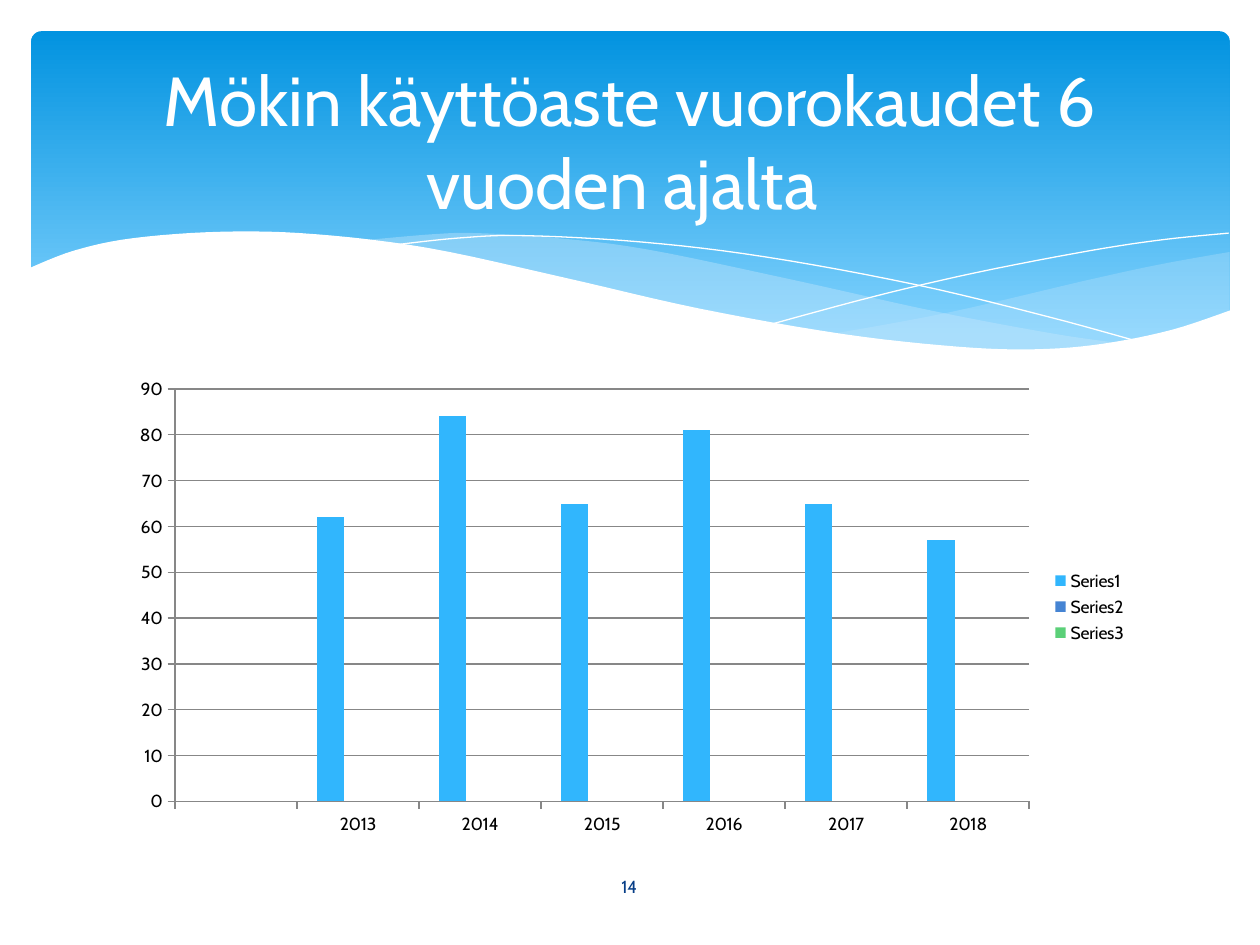
"""Builds a slide with a wave banner and a column chart of yearly cabin use."""
from lxml.etree import SubElement
from pptx import Presentation
from pptx.chart.data import CategoryChartData
from pptx.dml.color import RGBColor
from pptx.enum.chart import XL_CHART_TYPE, XL_LEGEND_POSITION, XL_TICK_MARK
from pptx.enum.shapes import MSO_SHAPE
from pptx.enum.text import MSO_ANCHOR, MSO_AUTO_SIZE, PP_ALIGN
from pptx.oxml.ns import qn
from pptx.util import Cm, Pt

FONT = "Cabin"
COLORS = {
    "white": "FFFFFF", "black": "000000", "number": "073E87", "grid": "878787",
    "banner_top": "0293E0", "banner_bottom": "83D3FE", "band": "C6E7FC",
    "series": ["31B6FD", "4584D3", "5BD078"],
}
YEARS = ["", "2013", "2014", "2015", "2016", "2017", "2018"]
DAYS = [None, 62, 84, 65, 81, 65, 57]

RIGHT_BAND_TOP = [(16.79, 6.73), (19.13, 6.3), (21.87, 5.66), (23.39, 5.33), (24.79, 5.08)]
RIGHT_BAND_BOTTOM = [(24.79, 6.27), (23.57, 6.68), (22.15, 6.96), (20.4, 7.06),
                     (18.59, 6.96), (16.79, 6.73)]
LONG_BAND_TOP = [(7.26, 4.85), (8.74, 4.72), (9.65, 4.7), (11.23, 4.8), (13.06, 5.03),
                 (15.98, 5.64), (18.82, 6.27), (21.26, 6.73), (22.68, 6.93)]
LONG_BAND_BOTTOM = [(22.68, 6.93), (21.03, 7.06), (19.63, 7.04), (17.65, 6.86),
                    (15.27, 6.48), (11.4, 5.64), (9.19, 5.16), (7.26, 4.85)]
FALLING_LINE = [(7.85, 4.95), (9.22, 4.8), (10.57, 4.75), (12.95, 4.88), (15.44, 5.18),
                (18.47, 5.74), (21.11, 6.38), (23.04, 6.91)]
RISING_LINE = [(15.57, 6.53), (17.65, 5.97), (19.71, 5.49), (22, 5.05), (23.47, 4.83),
               (24.77, 4.7)]
WAVE_TOP = [(0.58, 5.41), (1.5, 5.05), (2.69, 4.8), (4.5, 4.67), (6.35, 4.72), (8.64, 5),
            (11.35, 5.59), (14.1, 6.22), (16.97, 6.73), (19.33, 6.99), (20.9, 7.04),
            (22.23, 6.93), (23.62, 6.65), (24.82, 6.25)]
WAVE_BASE = [(24.82, 8.36), (0.58, 8.36)]


def rgb(name):
    """Return the named colour."""
    return RGBColor.from_string(COLORS[name])


def style_font(font, size, color):
    """Set the typeface, size and colour of a font."""
    font.name, font.size, font.color.rgb = FONT, Pt(size), rgb(color)


def smooth(knots, steps=6):
    """Return points on a Catmull-Rom curve through the knots."""
    padded = [knots[0], *knots, knots[-1]]
    points = [knots[0]]
    for a, b, c, d in zip(padded, padded[1:], padded[2:], padded[3:]):
        for step in range(1, steps + 1):
            t = step / steps
            points.append(tuple(
                (2 * q + (r - p) * t + (2 * p - 5 * q + 4 * r - s) * t ** 2
                 + (3 * q - p - 3 * r + s) * t ** 3) / 2
                for p, q, r, s in zip(a, b, c, d)))
    return points


def add_outline(slide, points, close):
    """Add a freeform through points given in centimetres."""
    scaled = [(Cm(x), Cm(y)) for x, y in points]
    builder = slide.shapes.build_freeform(*scaled[0])
    builder.add_line_segments(scaled[1:], close=close)
    shape = builder.convert_to_shape()
    shape.shadow.inherit = False
    return shape


def add_area(slide, points, color, opacity=100):
    """Add a filled area without an outline."""
    shape = add_outline(slide, points, True)
    shape.fill.solid()
    shape.fill.fore_color.rgb = rgb(color)
    shape.line.fill.background()
    if opacity < 100:
        fill_color = shape.element.xpath("./p:spPr/a:solidFill/a:srgbClr")[0]
        SubElement(fill_color, qn("a:alpha"), val=str(opacity * 1000))


def add_curve(slide, knots):
    """Add a white hairline curve."""
    shape = add_outline(slide, smooth(knots), False)
    shape.fill.background()
    shape.line.color.rgb = rgb("white")
    shape.line.width = Pt(0)


def add_banner(slide):
    """Add the gradient banner with its waves."""
    banner = slide.shapes.add_shape(
        MSO_SHAPE.ROUNDED_RECTANGLE, Cm(0.63), Cm(0.63), Cm(24.16), Cm(6.86))
    banner.adjustments[0] = 0.03
    banner.shadow.inherit = False
    banner.line.fill.background()
    banner.fill.gradient()
    banner.fill.gradient_angle = 270
    stops = zip(banner.fill.gradient_stops, (0, 0.9), ("banner_top", "banner_bottom"))
    for stop, position, color in stops:
        stop.position, stop.color.rgb = position, rgb(color)
    add_area(slide, smooth(RIGHT_BAND_TOP) + smooth(RIGHT_BAND_BOTTOM), "band", 29)
    add_area(slide, smooth(LONG_BAND_TOP) + smooth(LONG_BAND_BOTTOM), "band", 40)
    add_curve(slide, FALLING_LINE)
    add_curve(slide, RISING_LINE)
    add_area(slide, smooth(WAVE_TOP) + WAVE_BASE, "white")


def fill_text(shape, text, size, color):
    """Write one centred paragraph into a shape."""
    frame = shape.text_frame
    frame.text = text
    frame.word_wrap = True
    frame.auto_size = MSO_AUTO_SIZE.NONE
    frame.vertical_anchor = MSO_ANCHOR.MIDDLE
    paragraph = frame.paragraphs[0]
    paragraph.alignment = PP_ALIGN.CENTER
    style_font(paragraph.font, size, color)


def add_title(slide, text):
    """Place the title in front of the banner."""
    title = slide.shapes.title
    title.left, title.top, title.width, title.height = Cm(1.27), Cm(0.94), Cm(22.86), Cm(3.78)
    fill_text(title, text, 39.6, "white")
    slide.shapes._spTree.append(title.element)


def add_usage_chart(slide):
    """Add the column chart of days used per year."""
    data = CategoryChartData()
    data.categories = YEARS
    for number, values in enumerate([DAYS, [None] * 7, [None] * 7], 1):
        data.add_series(f"Series{number}", values)
    chart = slide.shapes.add_chart(
        XL_CHART_TYPE.COLUMN_CLUSTERED, Cm(2.41), Cm(7.44), Cm(20.57), Cm(9.58), data).chart
    style_font(chart.font, 10, "black")
    chart.has_title = False
    chart.has_legend = True
    chart.legend.position = XL_LEGEND_POSITION.RIGHT
    chart.legend.include_in_layout = False
    plot = chart.plots[0]
    plot.gap_width, plot.overlap, plot.vary_by_categories = 150, 0, False
    for series, color in zip(plot.series, COLORS["series"]):
        series.format.fill.solid()
        series.format.fill.fore_color.rgb = RGBColor.from_string(color)
    for axis in (chart.category_axis, chart.value_axis):
        axis.major_tick_mark = XL_TICK_MARK.OUTSIDE
        axis.format.line.color.rgb = rgb("grid")
    value_axis = chart.value_axis
    value_axis.minimum_scale, value_axis.maximum_scale, value_axis.major_unit = 0, 90, 10
    value_axis.major_gridlines.format.line.color.rgb = rgb("grid")


def main():
    """Build and save the presentation."""
    presentation = Presentation()
    presentation.slide_width, presentation.slide_height = Cm(25.4), Cm(19.05)
    slide = presentation.slides.add_slide(presentation.slide_layouts[5])
    add_banner(slide)
    number_box = slide.shapes.add_textbox(Cm(11.07), Cm(17.37), Cm(3.23), Cm(1.02))
    fill_text(number_box, "14", 10, "number")
    add_title(slide, "Mökin käyttöaste vuorokaudet 6 vuoden ajalta ")
    add_usage_chart(slide)
    presentation.save("out.pptx")


if __name__ == "__main__":
    main()
